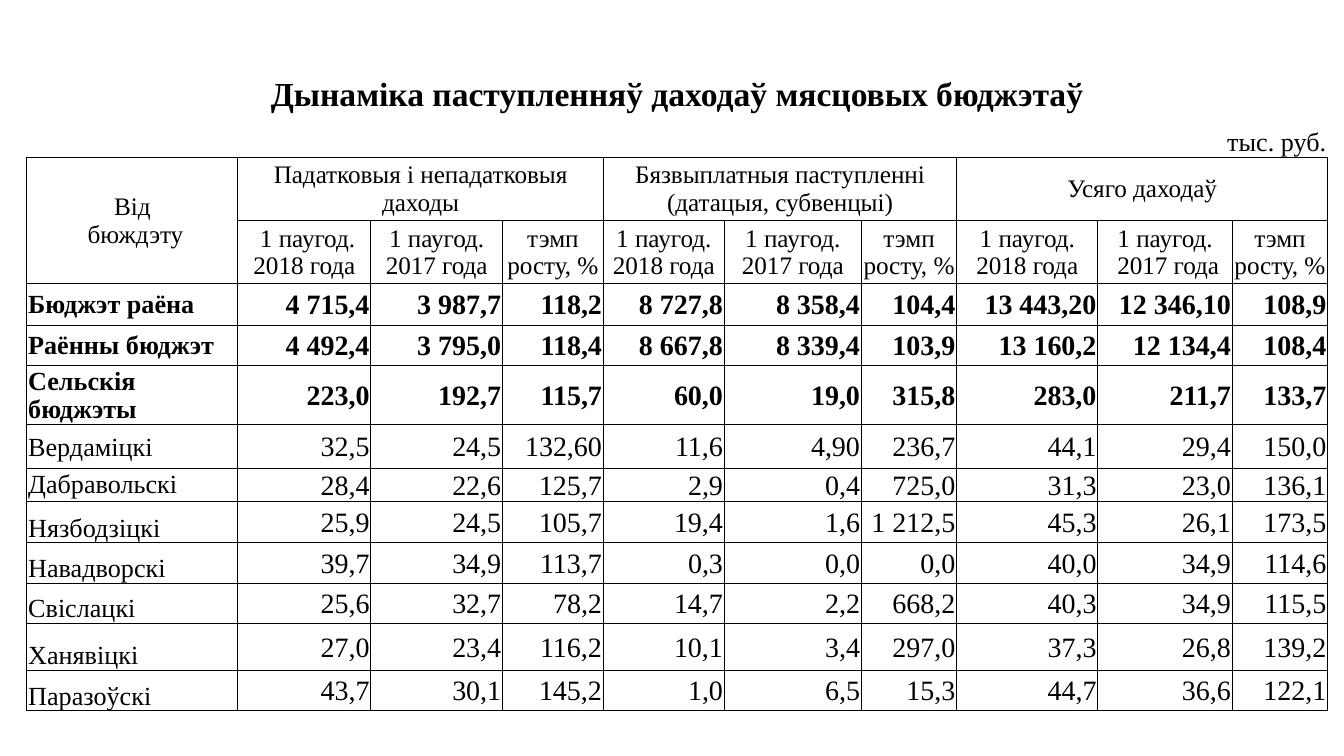
import pptx
import pptx.dml.color
import pptx.enum.text
import pptx.oxml.ns
import pptx.util
from lxml import etree

Inches, Pt = pptx.util.Inches, pptx.util.Pt
ALIGN, ANCHOR = pptx.enum.text.PP_ALIGN, pptx.enum.text.MSO_ANCHOR
qn = pptx.oxml.ns.qn

BLACK = "000000"
FONT = "Times New Roman"
NO_STYLE = "{2D5ABB26-0587-4C30-8999-92F81FD0307C}"

COLUMN_WIDTHS = [1.57, 0.99, 0.84, 0.14, 0.75, 0.9, 0.21, 0.81, 0.71, 1.05, 0.85, 0.15, 0.71]
ROW_HEIGHTS = [0.32, 0.32, 0.47, 0.47, 0.31, 0.3, 0.44, 0.33, 0.24, 0.31, 0.3, 0.3, 0.35, 0.3]

TITLE_SPANS = [13]
UNIT_SPANS = [1, 2, 4, 2, 1, 1, 2]
GROUP_SPANS = [1, 4, 4, 4]
DATA_SPANS = [1, 1, 2, 1, 1, 2, 1, 1, 2, 1]

TITLE = "Дынаміка паступленняў даходаў мясцовых бюджэтаў"
UNIT = "тыс. руб."
GROUPS = ["Вiд\n бюждэту", "Падатковыя і непадатковыя даходы",
          "Бязвыплатныя паступленні (датацыя, субвенцыі)", "Усяго даходаў"]
GROWTH = "тэмп\nросту, %"
PERIODS = ["", " 1 паугод. 2018 года", "1 паугод. 2017 года", GROWTH,
           "1 паугод.\n2018 года", "1 паугод. 2017 года", GROWTH,
           "1 паугод. 2018 года", "1 паугод.\n 2017 года", GROWTH]

BUDGETS = [
    ("Бюджэт раёна", "4 715,4|3 987,7|118,2|8 727,8|8 358,4|104,4|13 443,20|12 346,10|108,9"),
    ("Раённы бюджэт", "4 492,4|3 795,0|118,4|8 667,8|8 339,4|103,9|13 160,2|12 134,4|108,4"),
    ("Сельскія бюджэты", "223,0|192,7|115,7|60,0|19,0|315,8|283,0|211,7|133,7"),
    ("Вердаміцкі", "32,5|24,5|132,60|11,6|4,90|236,7|44,1|29,4|150,0"),
    ("Дабравольскі", "28,4|22,6|125,7|2,9|0,4|725,0|31,3|23,0|136,1"),
    ("Нязбодзіцкі", "25,9|24,5|105,7|19,4|1,6|1 212,5|45,3|26,1|173,5"),
    ("Навадворскі", "39,7|34,9|113,7|0,3|0,0|0,0|40,0|34,9|114,6"),
    ("Свіслацкі", "25,6|32,7|78,2|14,7|2,2|668,2|40,3|34,9|115,5"),
    ("Ханявіцкі", "27,0|23,4|116,2|10,1|3,4|297,0|37,3|26,8|139,2"),
    ("Паразоўскі", "43,7|30,1|145,2|1,0|6,5|15,3|44,7|36,6|122,1"),
]
SUMMARY_COUNT = 3


def color(hex_value):
    return pptx.dml.color.RGBColor.from_string(hex_value)


def set_borders(cell, sides):
    """Draw thin black lines on the given sides (any of L, R, T, B)."""
    properties = cell._tc.get_or_add_tcPr()
    for side in sides:
        line = etree.SubElement(properties, qn(f"a:ln{side}"), w=str(Pt(0.5)))
        fill = etree.SubElement(line, qn("a:solidFill"))
        etree.SubElement(fill, qn("a:srgbClr"), val=BLACK)


def format_grid(table):
    for column, width in zip(table.columns, COLUMN_WIDTHS):
        column.width = Inches(width)
    for index, (row, height) in enumerate(zip(table.rows, ROW_HEIGHTS)):
        row.height = Inches(height)
        sides = "" if index == 0 else "B" if index == 1 else "LRTB"
        for cell in row.cells:
            set_borders(cell, sides)
            cell.fill.background()
            cell.margin_left = cell.margin_right = cell.margin_top = Inches(0.01)
            cell.margin_bottom = 0
            cell.text_frame.paragraphs[0].font.size = Pt(14)


def merged_cells(table, row, spans):
    """Merge a row into the given column spans and return the leading cells."""
    cells, start = [], 0
    for span in spans:
        cell = table.cell(row, start)
        if span > 1:
            cell.merge(table.cell(row, start + span - 1))
        cells.append(cell)
        start += span
    return cells


def write(cell, text, size, align=ALIGN.CENTER, anchor=ANCHOR.MIDDLE, bold=False):
    cell.text_frame.text = text
    cell.vertical_anchor = anchor
    for paragraph in cell.text_frame.paragraphs:
        paragraph.alignment = align
        font = paragraph.font
        font.name, font.size, font.bold = FONT, Pt(size), bold
        font.color.rgb = color(BLACK)


def add_heading_rows(table):
    write(merged_cells(table, 0, TITLE_SPANS)[0], TITLE, 18, anchor=ANCHOR.BOTTOM, bold=True)
    write(merged_cells(table, 1, UNIT_SPANS)[-1], UNIT, 14, ALIGN.RIGHT, ANCHOR.BOTTOM)
    for cell, group in zip(merged_cells(table, 2, GROUP_SPANS), GROUPS):
        write(cell, group, 13.5)
    for cell, period in zip(merged_cells(table, 3, DATA_SPANS), PERIODS):
        if period:
            write(cell, period, 13.5)
    table.cell(2, 0).merge(table.cell(3, 0))


def add_budget_rows(table, first_row):
    for index, (budget, values) in enumerate(BUDGETS):
        label, *amounts = merged_cells(table, first_row + index, DATA_SPANS)
        bold = index < SUMMARY_COUNT
        value_anchor = ANCHOR.TOP if budget == "Дабравольскі" else ANCHOR.MIDDLE
        label_anchor = ANCHOR.BOTTOM if index > SUMMARY_COUNT + 1 else value_anchor
        write(label, budget, 14, ALIGN.LEFT, label_anchor, bold)
        for cell, value in zip(amounts, values.split("|")):
            write(cell, value, 15, ALIGN.RIGHT, value_anchor, bold)


def add_income_table(slide, left, top):
    frame = slide.shapes.add_table(
        len(ROW_HEIGHTS), len(COLUMN_WIDTHS), Inches(left), Inches(top),
        Inches(sum(COLUMN_WIDTHS)), Inches(sum(ROW_HEIGHTS)))
    table = frame.table
    table.first_row = table.horz_banding = False
    table._tbl.tblPr.find(qn("a:tableStyleId")).text = NO_STYLE
    format_grid(table)
    add_heading_rows(table)
    add_budget_rows(table, first_row=4)


def main():
    deck = pptx.Presentation()
    deck.slide_width = Inches(10)
    deck.slide_height = deck.slide_width * 9 // 16
    slide = deck.slides.add_slide(deck.slide_layouts[6])
    add_income_table(slide, left=0.2, top=0.53)
    deck.save("out.pptx")


if __name__ == "__main__":
    main()
